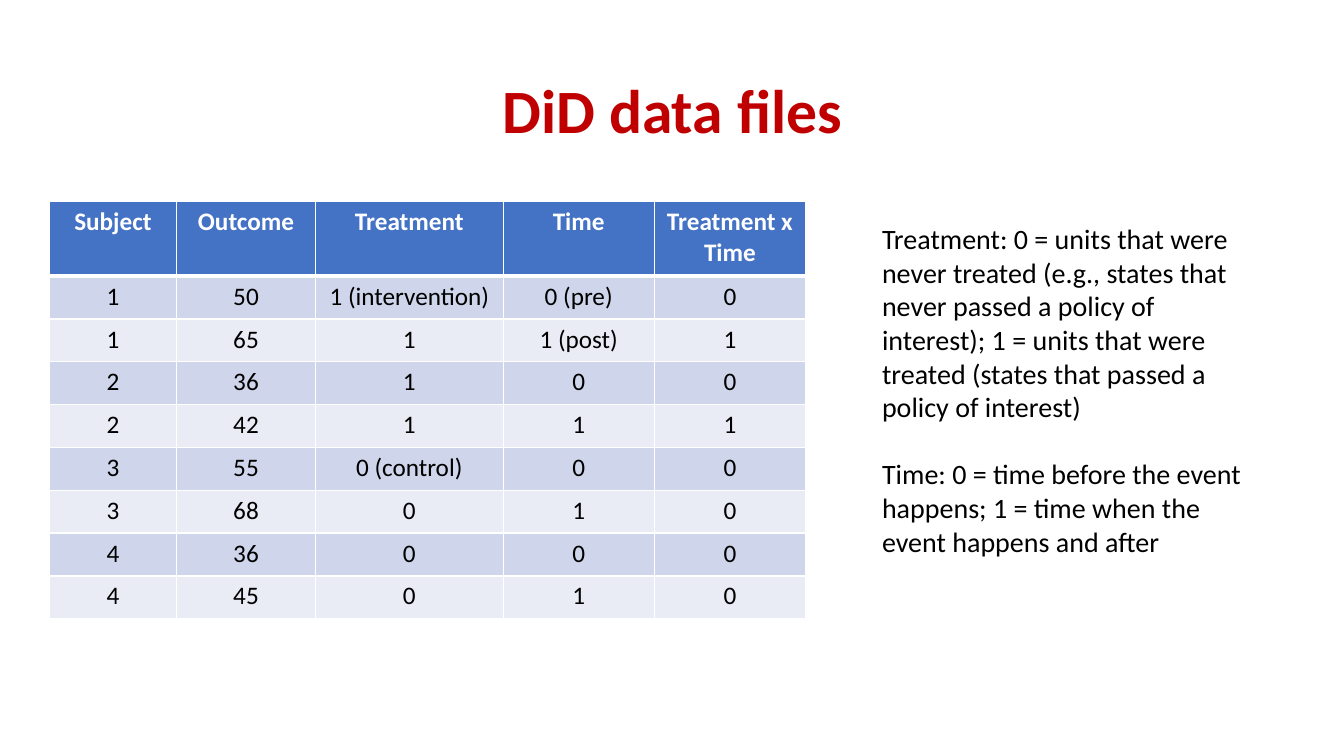
from lxml.etree import SubElement
from pptx import Presentation
from pptx.dml.color import RGBColor
from pptx.enum.text import MSO_ANCHOR, PP_ALIGN
from pptx.oxml.ns import qn
from pptx.util import Inches, Pt

COLORS = {
    "title": "C00000",
    "text": "000000",
    "white": "FFFFFF",
    "header": "4472C4",
    "dark band": "CFD5EA",
    "light band": "E9EBF5",
}


def write_paragraph(paragraph, text, size, color, bold=False, alignment=PP_ALIGN.LEFT):
    paragraph.text = text
    paragraph.alignment = alignment
    font_format = {"name": "Calibri", "size": Pt(size), "bold": bold}
    for attribute, value in font_format.items():
        setattr(paragraph.font, attribute, value)
    paragraph.font.color.rgb = RGBColor.from_string(COLORS[color])


def add_borders(cell, widths):
    """Draw white cell borders; widths maps a side (L, R, T, B) to points."""
    properties = cell._tc.get_or_add_tcPr()
    for side, width in widths.items():
        line = SubElement(properties, qn(f"a:ln{side}"), w=str(Pt(width)))
        fill = SubElement(line, qn("a:solidFill"))
        SubElement(fill, qn("a:srgbClr"), val=COLORS["white"])


presentation = Presentation()
presentation.slide_width = Inches(13.33)
presentation.slide_height = Inches(7.5)
slide = presentation.slides.add_slide(presentation.slide_layouts[6])

# Title
title = slide.shapes.add_textbox(Inches(0.92), Inches(0.4), Inches(11.5), Inches(1.45))
title.text_frame.word_wrap = True
title.text_frame.vertical_anchor = MSO_ANCHOR.MIDDLE
title_paragraph = title.text_frame.paragraphs[0]
write_paragraph(title_paragraph, "DiD data files", 44, "title", True, PP_ALIGN.CENTER)
title_paragraph.line_spacing = 0.9

# Data table
rows = [
    ["Subject", "Outcome", "Treatment", "Time", "Treatment x Time"],
    ["1", "50", "1 (intervention)", "0 (pre)", "0"],
    ["1", "65", "1", "1 (post)", "1"],
    ["2", "36", "1", "0", "0"],
    ["2", "42", "1", "1", "1"],
    ["3", "55", "0 (control)", "0", "0"],
    ["3", "68", "0", "1", "0"],
    ["4", "36", "0", "0", "0"],
    ["4", "45", "0", "1", "0"],
]
column_widths = [1.26, 1.38, 1.86, 1.5, 1.5]
header_height, row_height = 0.74, 0.425
table = slide.shapes.add_table(
    len(rows), len(column_widths), Inches(0.49), Inches(2),
    Inches(sum(column_widths)), Inches(header_height + row_height * (len(rows) - 1)),
).table
for column, width in zip(table.columns, column_widths):
    column.width = Inches(width)

for row_index, values in enumerate(rows):
    is_header = row_index == 0
    table.rows[row_index].height = Inches(header_height if is_header else row_height)
    band = "header" if is_header else ("dark band" if row_index % 2 else "light band")
    border_widths = {
        "L": 1,
        "R": 1,
        "T": 3 if row_index == 1 else 1,
        "B": 3 if is_header else 1,
    }
    for column_index, value in enumerate(values):
        cell = table.cell(row_index, column_index)
        add_borders(cell, border_widths)
        cell.fill.solid()
        cell.fill.fore_color.rgb = RGBColor.from_string(COLORS[band])
        write_paragraph(
            cell.text_frame.paragraphs[0], value, 18,
            "white" if is_header else "text", is_header, PP_ALIGN.CENTER,
        )

# Variable definitions
definitions = [
    "Treatment: 0 = units that were never treated (e.g., states that never passed "
    "a policy of interest); 1 = units that were treated (states that passed a policy "
    "of interest)",
    "Time: 0 = time before the event happens; 1 = time when the event happens and after",
]
notes = slide.shapes.add_textbox(Inches(8.65), Inches(2.15), Inches(3.76), Inches(3.47))
notes.text_frame.word_wrap = True
for index, definition in enumerate(definitions):
    paragraph = notes.text_frame.add_paragraph() if index else notes.text_frame.paragraphs[0]
    write_paragraph(paragraph, definition, 20, "text")
    if index:
        paragraph.space_before = Pt(24)

presentation.save("out.pptx")
